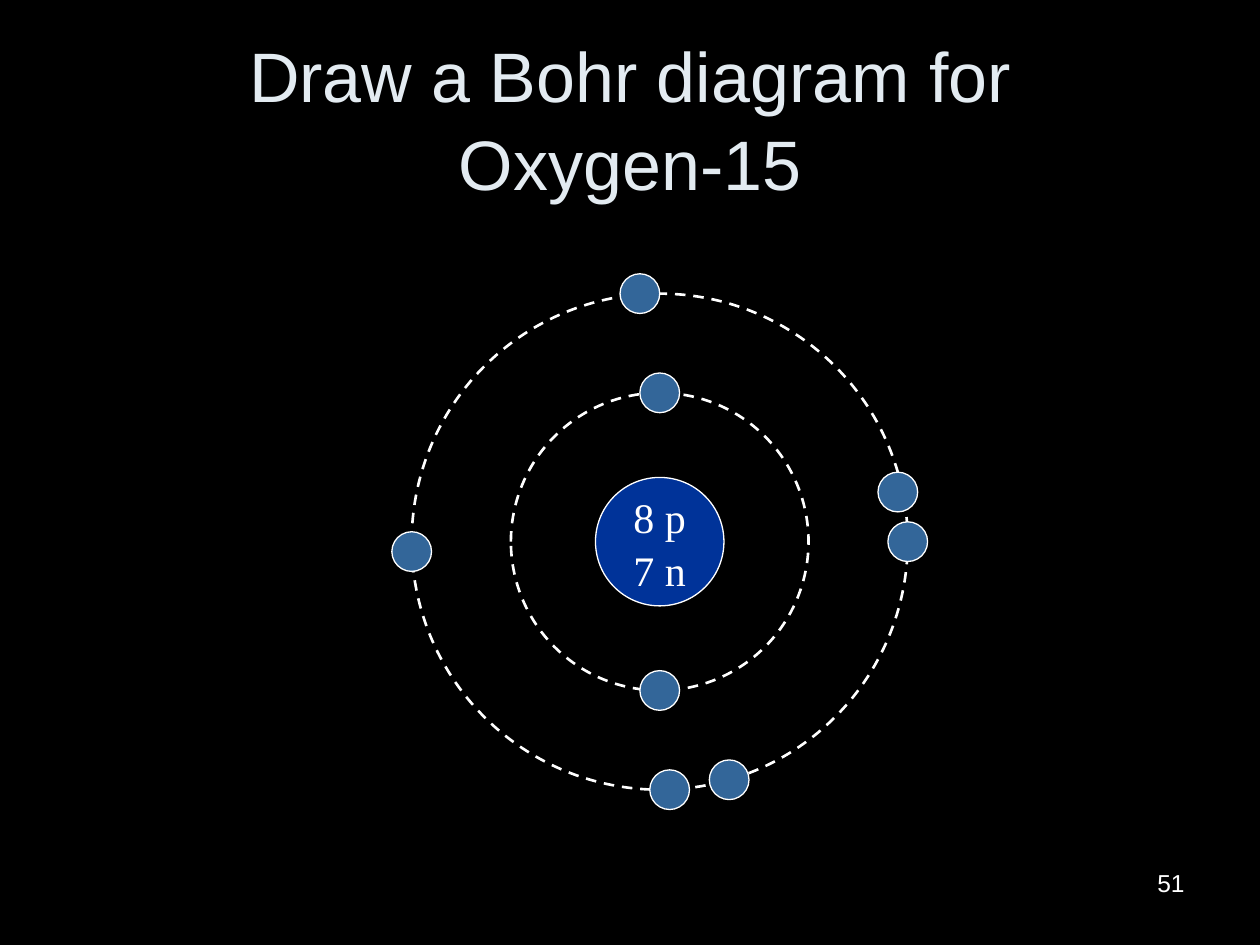
"""Build a slide with the Bohr diagram of Oxygen-15."""
from pptx import Presentation
from pptx.dml.color import RGBColor
from pptx.enum.dml import MSO_LINE
from pptx.enum.shapes import MSO_SHAPE
from pptx.enum.text import MSO_ANCHOR, PP_ALIGN
from pptx.util import Cm, Pt

OVAL = MSO_SHAPE.OVAL
DASH = MSO_LINE.DASH
MIDDLE = MSO_ANCHOR.MIDDLE
TOP = MSO_ANCHOR.TOP
CENTER = PP_ALIGN.CENTER
RIGHT = PP_ALIGN.RIGHT

WHITE = "FFFFFF"
CENTER_X, CENTER_Y = 13.3, 10.92
NUCLEUS_SIZE = 2.59
ELECTRON_SIZE = 0.8
SHELLS = {
    6: [(0, -3), (0, 3)],
    10: [(-0.4, -5), (-5, 0.2), (0.2, 5), (5, 0), (1.4, 4.8), (4.8, -1)],
}


def color(value):
    return RGBColor.from_string(value)


class BohrSlide:
    def __init__(self, deck):
        self.page = deck.slides.add_slide(deck.slide_layouts[5])
        background = self.page.background.fill
        background.solid()
        background.fore_color.rgb = color("000000")

    def set_text(self, shape, lines, size, font, tint, align, anchor, wrap=True):
        frame = shape.text_frame
        frame.text = "\n".join(lines)
        frame_format = {"word_wrap": wrap, "vertical_anchor": anchor}
        for name, value in frame_format.items():
            setattr(frame, name, value)
        para_format = {"alignment": align, "line_spacing": 1.05}
        span_format = {"size": Pt(size), "name": font}
        for para in frame.paragraphs:
            for name, value in para_format.items():
                setattr(para, name, value)
            for span in para.runs:
                for name, value in span_format.items():
                    setattr(span.font, name, value)
                span.font.color.rgb = color(tint)

    def title(self, text, left, top, width, height):
        box = self.page.shapes.title
        place = {"left": left, "top": top, "width": width, "height": height}
        for name, value in place.items():
            setattr(box, name, Cm(value))
        self.set_text(box, [text], 40, "Arial", "E3EBF1", CENTER, MIDDLE)

    def circle(self, size, offset=(0, 0), fill=None, weight=0.75, dash=None):
        left = CENTER_X + offset[0] - size / 2
        top = CENTER_Y + offset[1] - size / 2
        shape = self.page.shapes.add_shape(
            OVAL, Cm(left), Cm(top), Cm(size), Cm(size))
        shape.shadow.inherit = False
        if fill:
            shape.fill.solid()
            shape.fill.fore_color.rgb = color(fill)
        else:
            shape.fill.background()
        shape.line.color.rgb = color(WHITE)
        line_format = {"width": Pt(weight), "dash_style": dash}
        for name, value in line_format.items():
            setattr(shape.line, name, value)
        return shape

    def nucleus(self, lines):
        shape = self.circle(NUCLEUS_SIZE, fill="003399")
        self.set_text(shape, lines, 24, "Times New Roman", WHITE, CENTER,
                      MIDDLE, wrap=False)

    def shell(self, size):
        self.circle(size, weight=1.5, dash=DASH)

    def electron(self, offset):
        self.circle(ELECTRON_SIZE, offset, fill="336699")

    def page_number(self, text, left, top, width, height):
        box = self.page.shapes.add_textbox(
            Cm(left), Cm(top), Cm(width), Cm(height))
        self.set_text(box, [text], 14, "Arial", WHITE, RIGHT, TOP)


def main():
    deck = Presentation()
    deck.slide_width, deck.slide_height = Cm(25.4), Cm(19.05)
    slide = BohrSlide(deck)
    slide.title("Draw a Bohr diagram for Oxygen-15", 1.27, 0.76, 22.86, 3.18)
    slide.nucleus(["8 p", "7 n"])
    for size in SHELLS:
        slide.shell(size)
    for offsets in SHELLS.values():
        for offset in offsets:
            slide.electron(offset)
    slide.page_number("51", 18.21, 17.35, 5.92, 1.32)
    deck.save("out.pptx")


if __name__ == "__main__":
    main()
